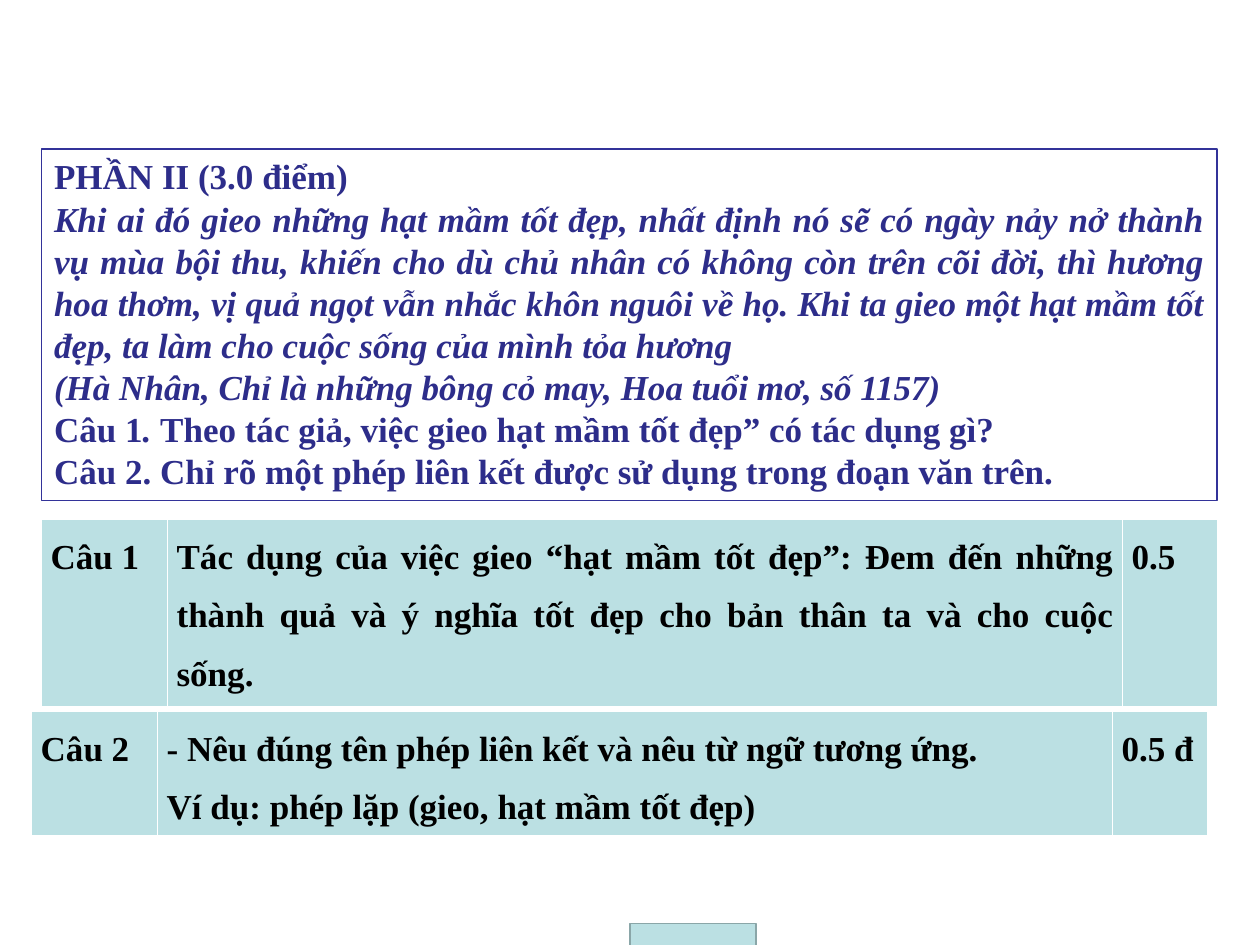
from dataclasses import dataclass

from lxml import etree
from pptx import Presentation
from pptx import util as u
from pptx.dml.color import RGBColor
from pptx.enum import shapes, text
from pptx.oxml.ns import qn


@dataclass(frozen=True)
class Theme:
    font: str = "Times New Roman"
    size: u.Pt = u.Pt(20)
    navy: str = "2D2D8A"
    frame: str = "333399"
    black: str = "000000"
    white: str = "FFFFFF"
    aqua: str = "BBE0E3"
    aqua_line: str = "8AA6A8"


@dataclass(frozen=True)
class Run:
    text: str
    italic: bool = False


@dataclass(frozen=True)
class Para:
    runs: tuple[Run, ...]
    justified: bool = False


@dataclass(frozen=True)
class AnswerRow:
    left: float
    top: float
    height: float
    cells: tuple[tuple[Para, ...], ...]


THEME = Theme()
COLUMN_WIDTHS = (2.54, 19.25, 1.91)
BORDERS = {"a:lnL": 1, "a:lnR": 1, "a:lnT": 1, "a:lnB": 3}


def para(content: str, italic: bool = False, justified: bool = False) -> Para:
    return Para((Run(content, italic),), justified)


QUESTION = (
    para("PHẦN II (3.0 điểm)", justified=True),
    para(
        "Khi ai đó gieo những hạt mầm tốt đẹp, nhất định nó sẽ có ngày nảy nở thành "
        "vụ mùa bội thu, khiến cho dù chủ nhân có không còn trên cõi đời, thì hương "
        "hoa thơm, vị quả ngọt vẫn nhắc khôn nguôi về họ. Khi ta gieo một hạt mầm tốt "
        "đẹp, ta làm cho cuộc sống của mình tỏa hương",
        italic=True, justified=True,
    ),
    para("(Hà Nhân, Chỉ là những bông cỏ may, Hoa tuổi mơ, số 1157)",
         italic=True, justified=True),
    Para((Run("Câu 1"), Run(". ", italic=True),
          Run("Theo tác giả, việc gieo hạt mầm tốt đẹp” có tác dụng gì?")), justified=True),
    para("Câu 2. Chỉ rõ một phép liên kết được sử dụng trong đoạn văn trên.",
         justified=True),
)

ANSWERS = (
    AnswerRow(0.84, 10.46, 3.66, (
        (para("Câu 1"),),
        (para("Tác dụng của việc gieo “hạt mầm tốt đẹp”: Đem đến những thành quả "
              "và ý nghĩa tốt đẹp cho bản thân ta và cho cuộc sống.", justified=True),),
        (para("0.5"),),
    )),
    AnswerRow(0.64, 14.33, 2.39, (
        (para("Câu 2"),),
        (para("- Nêu đúng tên phép liên kết và nêu từ ngữ tương ứng.", justified=True),
         para("Ví dụ: phép lặp (gieo, hạt mầm tốt đẹp)")),
        (para("0.5 đ"),),
    )),
)


def rgb(color: str) -> RGBColor:
    return RGBColor.from_string(color)


def write(tf, paras: tuple[Para, ...], color: str, spacing: float = 1.0) -> None:
    for i, item in enumerate(paras):
        p = tf.add_paragraph() if i else tf.paragraphs[0]
        p.alignment = text.PP_ALIGN.JUSTIFY if item.justified else text.PP_ALIGN.LEFT
        p.line_spacing = spacing
        for run in item.runs:
            r = p.add_run()
            r.text = run.text
            r.font.name = THEME.font
            r.font.size = THEME.size
            r.font.bold = True
            r.font.italic = run.italic
            r.font.color.rgb = rgb(color)


def add_box(s, left: float, top: float, width: float, height: float, fill: str, line: str):
    sp = s.shapes.add_shape(shapes.MSO_SHAPE.RECTANGLE,
                            u.Cm(left), u.Cm(top), u.Cm(width), u.Cm(height))
    sp.shadow.inherit = False
    sp.fill.solid()
    sp.fill.fore_color.rgb = rgb(fill)
    sp.line.color.rgb = rgb(line)
    sp.line.width = u.Pt(1)
    return sp


def add_question(s) -> None:
    sp = add_box(s, 0.84, 3, 23.7, 7.09, THEME.white, THEME.frame)
    tf = sp.text_frame
    tf.word_wrap = True
    tf.auto_size = text.MSO_AUTO_SIZE.SHAPE_TO_FIT_TEXT
    tf.vertical_anchor = text.MSO_ANCHOR.TOP
    write(tf, QUESTION, THEME.navy)


def set_borders(cell) -> None:
    tc_pr = cell._tc.get_or_add_tcPr()
    for tag, points in BORDERS.items():
        ln = etree.SubElement(tc_pr, qn(tag), w=str(u.Pt(points)))
        fill = etree.SubElement(ln, qn("a:solidFill"))
        etree.SubElement(fill, qn("a:srgbClr"), val=THEME.white)


def add_answer(s, row: AnswerRow) -> None:
    table = s.shapes.add_table(1, len(COLUMN_WIDTHS), u.Cm(row.left), u.Cm(row.top),
                               u.Cm(sum(COLUMN_WIDTHS)), u.Cm(row.height)).table
    for column, width in zip(table.columns, COLUMN_WIDTHS):
        column.width = u.Cm(width)
    for cell, paras in zip(table.rows[0].cells, row.cells):
        cell.margin_left = cell.margin_right = u.Cm(0.18)
        cell.margin_top = cell.margin_bottom = 0
        set_borders(cell)
        cell.fill.solid()
        cell.fill.fore_color.rgb = rgb(THEME.aqua)
        write(cell.text_frame, paras, THEME.black, spacing=1.5)


def main() -> None:
    prs = Presentation()
    prs.slide_width, prs.slide_height = u.Cm(25.4), u.Cm(19.05)
    s = prs.slides.add_slide(prs.slide_layouts[6])
    add_question(s)
    add_box(s, 12.7, 18.62, 2.54, 2.54, THEME.aqua, THEME.aqua_line)
    for row in ANSWERS:
        add_answer(s, row)
    prs.save("out.pptx")


if __name__ == "__main__":
    main()
